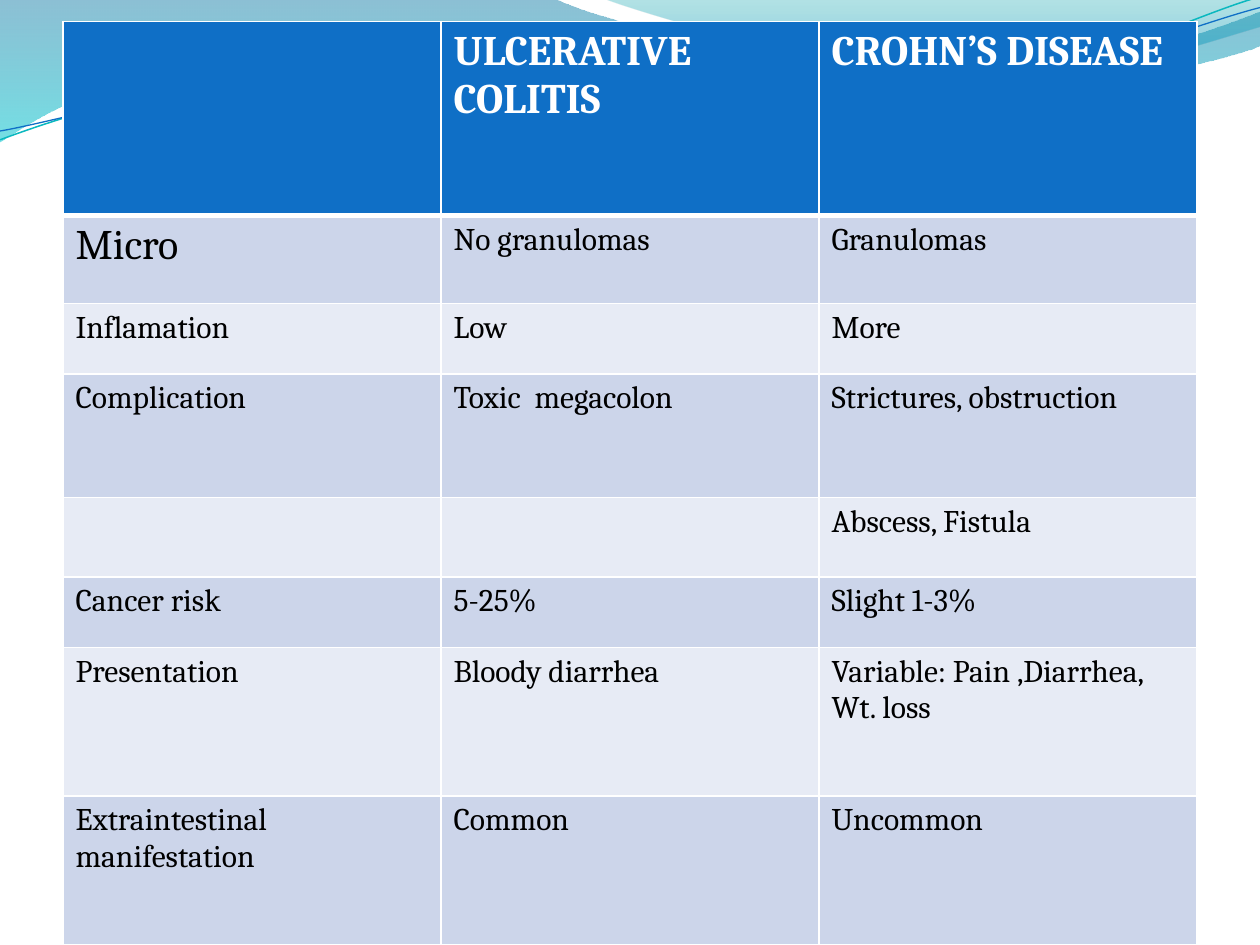
from dataclasses import dataclass
from math import cos, radians, sin

from lxml.etree import SubElement
from pptx import Presentation
from pptx.dml.color import RGBColor
from pptx.oxml.ns import qn
from pptx.util import Inches, Pt

Point = tuple[float, float]
FONT = "Cambria"
WHITE, BLACK, BLUE = "FFFFFF", "000000", "0F6FC6"
BANDS = ("CCD5EA", "E7EBF5")
LINE_TILT = -2.7
LINE_CENTER = (4.99, 0.58)


@dataclass
class GradientStop:
    percent: int
    color: str
    opacity: int


@dataclass
class Wave:
    """Start point, then segments: one point for a line, three for a curve."""
    start: Point
    segments: list[tuple[Point, ...]]
    stops: tuple[GradientStop, ...] = ()
    line_color: str = ""
    line_width: float = 0


@dataclass
class Row:
    height: float
    texts: tuple[str, str, str]


WAVES = [
    Wave((0, 0), [
        ((4.4, -0.01),),
        ((4.76, 0.17), (6.64, 0.63), (7.58, 0.63)),
        ((8.53, 0.63), (9.58, 0.26), (10, 0.09)),
        ((10.01, 0.36),),
        ((9.83, 0.44), (8.7, 0.76), (7.46, 0.75)),
        ((6.22, 0.75), (3.82, 0.28), (2.57, 0.34)),
        ((1.29, 0.36), (0.46, 0.83), (-0.01, 1.13)),
        ((0, 0),),
    ], stops=(GradientStop(0, "0074A1", 45), GradientStop(100, "00C6CF", 55))),
    Wave((4.79, -0.01), [
        ((5.09, 0.11), (6.82, 0.62), (7.69, 0.65)),
        ((8.56, 0.69), (9.61, 0.32), (10, 0.21)),
        ((10, 0),),
        ((4.79, -0.01),),
    ], stops=(GradientStop(0, "00A1A9", 30), GradientStop(80, "008BBF", 45))),
    Wave((0, 1.11), [
        ((0.48, 0.93), (1.58, 0.57), (2.77, 0.52)),
        ((3.95, 0.47), (5.93, 0.89), (7.13, 0.8)),
        ((8.33, 0.71), (9.38, 0.15), (9.98, -0.02)),
    ], line_color="0AB8BF", line_width=0.85),
    Wave((0, 1.04), [
        ((0.47, 0.96), (1.64, 0.61), (2.83, 0.56)),
        ((4.03, 0.51), (5.97, 0.84), (7.17, 0.75)),
        ((8.36, 0.67), (9.41, 0.21), (10, 0.06)),
    ], line_color=BLUE, line_width=0.75),
]

ROWS = [
    Row(1.54, ("", "ULCERATIVE COLITIS", "CROHN’S DISEASE")),
    Row(0.7, ("Micro", "No granulomas", "Granulomas")),
    Row(0.56, ("Inflamation", "Low", "More")),
    Row(0.98, ("Complication", "Toxic  megacolon", "Strictures, obstruction")),
    Row(0.63, ("", "", "Abscess, Fistula")),
    Row(0.56, ("Cancer risk", "5-25%", "Slight 1-3%")),
    Row(1.18, ("Presentation", "Bloody diarrhea", "Variable: Pain ,Diarrhea, Wt. loss")),
    Row(1.18, ("Extraintestinal manifestation", "Common", "Uncommon")),
]


def rgb(color: str) -> RGBColor:
    return RGBColor.from_string(color)


def place(point: Point, tilt: float) -> tuple[int, int]:
    """Give a point in slide units, with the shape's tilt taken out."""
    angle = radians(-tilt)
    center_x, center_y = LINE_CENTER
    x, y = point[0] - center_x, point[1] - center_y
    return (Inches(center_x + x * cos(angle) - y * sin(angle)),
            Inches(center_y + x * sin(angle) + y * cos(angle)))


def bend(shape, segments: list[list[tuple[int, int]]]) -> None:
    """Turn the straight segments that have control points into curves."""
    lines = list(shape.element.iter(qn("a:lnTo")))
    for line, points in zip(lines, segments):
        if len(points) == 1:
            continue
        curve = line.getparent().makeelement(qn("a:cubicBezTo"))
        for x, y in points:
            SubElement(curve, qn("a:pt"), x=str(x - shape.left), y=str(y - shape.top))
        line.getparent().replace(line, curve)


def fill_gradient(shape, stops: tuple[GradientStop, ...]) -> None:
    """Fill from top to bottom with partly transparent stops."""
    shape.fill.gradient()
    gradient = shape.element.spPr.find(qn("a:gradFill"))
    for child in list(gradient):
        gradient.remove(child)
    stop_list = SubElement(gradient, qn("a:gsLst"))
    for stop in stops:
        position = SubElement(stop_list, qn("a:gs"), pos=str(stop.percent * 1000))
        color = SubElement(position, qn("a:srgbClr"), val=stop.color)
        SubElement(color, qn("a:alpha"), val=str(stop.opacity * 1000))
    SubElement(gradient, qn("a:lin"), ang="5400000", scaled="0")


def draw_wave(slide, wave: Wave) -> None:
    filled = bool(wave.stops)
    tilt = 0 if filled else LINE_TILT
    segments = [[place(point, tilt) for point in segment] for segment in wave.segments]
    builder = slide.shapes.build_freeform(*place(wave.start, tilt))
    builder.add_line_segments([segment[-1] for segment in segments], close=filled)
    shape = builder.convert_to_shape()
    bend(shape, segments)
    shape.rotation = tilt
    shape.shadow.inherit = False
    if filled:
        fill_gradient(shape, wave.stops)
        shape.line.fill.background()
    else:
        shape.fill.background()
        shape.line.color.rgb = rgb(wave.line_color)
        shape.line.width = Pt(wave.line_width)


def set_borders(cell, top: float, bottom: float) -> None:
    properties = cell._tc.get_or_add_tcPr()
    for side, width in (("L", 1), ("R", 1), ("T", top), ("B", bottom)):
        border = SubElement(properties, qn(f"a:ln{side}"), w=str(Pt(width)))
        SubElement(SubElement(border, qn("a:solidFill")), qn("a:srgbClr"), val=WHITE)


def style_cell(cell, text: str, row: int, column: int) -> None:
    header = row == 0
    set_borders(cell, top=3 if row == 1 else 1, bottom=3 if header else 1)
    cell.fill.solid()
    cell.fill.fore_color.rgb = rgb(BLUE if header else BANDS[(row - 1) % 2])
    cell.text_frame.text = text
    for run in cell.text_frame.paragraphs[0].runs:
        run.font.name = FONT
        run.font.size = Pt(24 if header or (row, column) == (1, 0) else 18)
        run.font.bold = header
        run.font.color.rgb = rgb(WHITE if header else BLACK)


def draw_comparison(slide) -> None:
    height = sum(row.height for row in ROWS)
    table = slide.shapes.add_table(
        len(ROWS), 3, Inches(0.5), Inches(0.17), Inches(9), Inches(height)).table
    for r, row in enumerate(ROWS):
        table.rows[r].height = Inches(row.height)
        for c, text in enumerate(row.texts):
            style_cell(table.cell(r, c), text, r, c)


def main() -> None:
    presentation = Presentation()
    presentation.slide_width, presentation.slide_height = Inches(10), Inches(7.5)
    slide = presentation.slides.add_slide(presentation.slide_layouts[6])
    for wave in WAVES:
        draw_wave(slide, wave)
    draw_comparison(slide)
    presentation.save("out.pptx")


if __name__ == "__main__":
    main()
